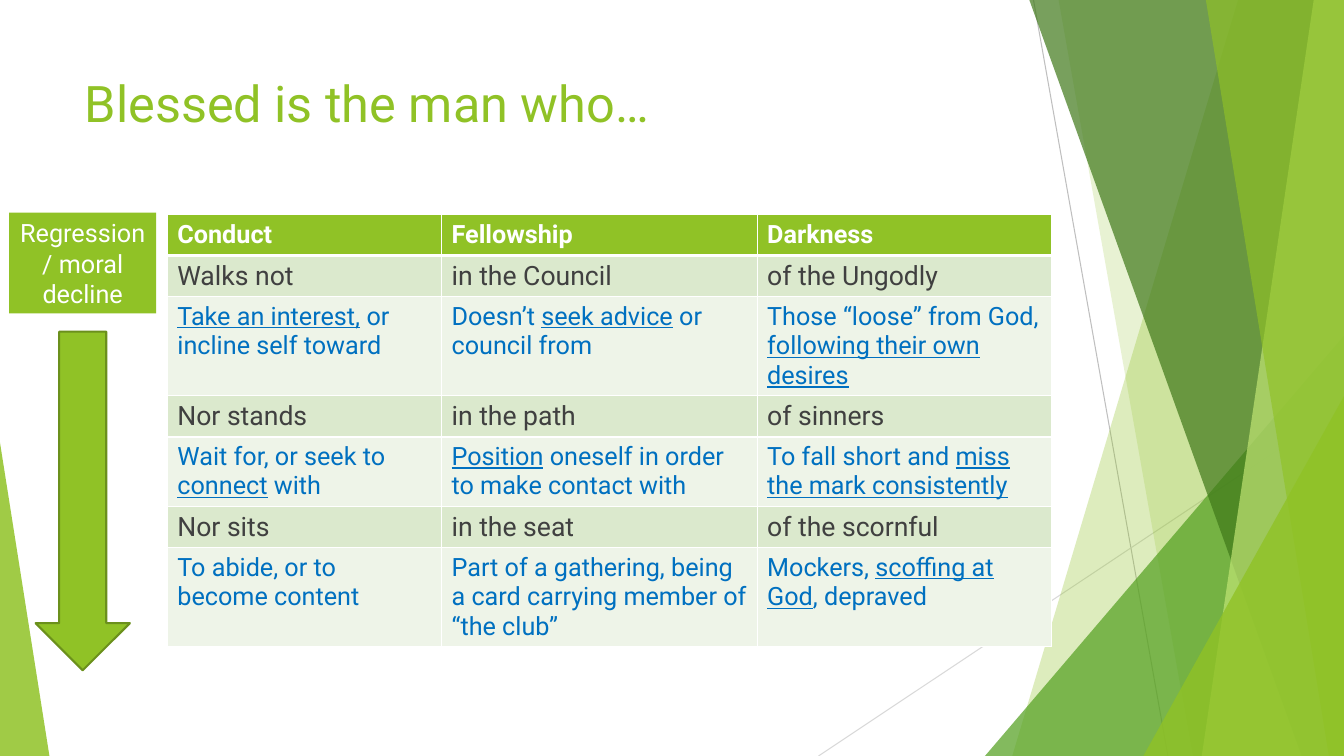
from lxml import etree
from pptx import Presentation
from pptx.dml.color import RGBColor
from pptx.enum.shapes import MSO_CONNECTOR, MSO_SHAPE
from pptx.enum.text import MSO_ANCHOR, PP_ALIGN
from pptx.oxml.ns import qn
from pptx.util import Inches, Pt

STRAIGHT = MSO_CONNECTOR.STRAIGHT
TRIANGLE, RECTANGLE, DOWN_ARROW = (
    MSO_SHAPE.ISOSCELES_TRIANGLE, MSO_SHAPE.RECTANGLE, MSO_SHAPE.DOWN_ARROW)
TOP, MIDDLE = MSO_ANCHOR.TOP, MSO_ANCHOR.MIDDLE
LEFT, CENTER = PP_ALIGN.LEFT, PP_ALIGN.CENTER

WIDTH, HEIGHT = Inches(13.33), Inches(7.5)
FONT = "Roboto"
COLORS = {
    "lime": "90C226", "green": "54A021", "forest": "3F7819", "pale": "C0E474",
    "edge": "6B901C", "white": "FFFFFF", "ink": "404040", "blue": "0070C0",
    "verse_band": "DBE9CD", "meaning_band": "EEF4E8",
    "ray_dark": "BFBFBF", "ray_light": "D9D9D9",
}
FORMATS = {
    "title": {"size": Pt(36), "bold": False, "color": "lime"},
    "label": {"size": Pt(18), "bold": False, "color": "white"},
    "header": {"size": Pt(18), "bold": True, "color": "white"},
    "verse": {"size": Pt(19), "bold": False, "color": "ink"},
    "meaning": {"size": Pt(18), "bold": False, "color": "blue"},
}
BANDS = {"header": "lime", "verse": "verse_band", "meaning": "meaning_band"}

HEADINGS = ("Conduct", "Fellowship", "Darkness")
COLUMN_WEIGHTS = (2.72, 3.13, 2.92)
VERSES = [
    ("Walks not", "in the Council", "of the Ungodly"),
    ("Nor stands", "in the path", "of sinners"),
    ("Nor sits", "in the seat", "of the scornful"),
]
MEANINGS = [
    (3, ("_Take an interest,_ or incline self toward",
         "Doesn’t _seek advice_ or council from",
         "Those “loose” from God, _following their own desires_")),
    (2, ("Wait for, or seek to _connect_ with",
         "_Position_ oneself in order to make contact with",
         "To fall short and _miss the mark consistently_")),
    (3, ("To abide, or to become content",
         "Part of a gathering, being a card carrying member of “the club”",
         "Mockers, _scoffing at God_, depraved")),
]


def percent_box(left, top, width, height):
    return (int(WIDTH * left / 100), int(HEIGHT * top / 100),
            int(WIDTH * width / 100), int(HEIGHT * height / 100))


def within(box, left, top, width, height):
    x, y, w, h = box
    return int(x + w * left), int(y + h * top), int(w * width), int(h * height)


def rgb(color):
    return RGBColor.from_string(COLORS[color])


def paint(shape, color, opacity=100, edge=None):
    shape.shadow.inherit = False
    shape.fill.solid()
    shape.fill.fore_color.rgb = rgb(color)
    if opacity < 100:
        hue = next(shape.fill._xPr.iter(qn("a:srgbClr")))
        etree.SubElement(hue, qn("a:alpha"), val=str(opacity * 1000))
    if edge:
        shape.line.color.rgb = rgb(edge)
        shape.line.width = Pt(1.5)
    else:
        shape.line.fill.background()


def write(frame, text, style, align=LEFT):
    paragraph = frame.paragraphs[0]
    paragraph.alignment = align
    for index, part in enumerate(text.split("_")):
        if not part:
            continue
        run = paragraph.add_run()
        run.text = part
        run.font.name = FONT
        run.font.underline = index % 2 == 1
        for name, value in FORMATS[style].items():
            if name == "color":
                run.font.color.rgb = rgb(value)
            else:
                setattr(run.font, name, value)


def add_ray(shapes, box, start, end, color):
    x1, y1, _, _ = within(box, *start, 0, 0)
    x2, y2, _, _ = within(box, *end, 0, 0)
    ray = shapes.add_connector(STRAIGHT, x1, y1, x2, y2)
    ray.line.color.rgb = rgb(color)
    ray.line.width = Pt(0.75)
    etree.SubElement(ray._element.spPr, qn("a:effectLst"))


def add_facet(shapes, box, top_x, bottom_x, color, opacity):
    x, y, width, height = box
    right, bottom = x + width, y + height
    outline = shapes.build_freeform(int(x + width * top_x / 100), y, scale=1.0)
    outline.add_line_segments(
        [(right, y), (right, bottom), (int(x + width * bottom_x / 100), bottom)])
    paint(outline.convert_to_shape(), color, opacity)


def add_corner(shapes, left, top, width, apex, color, opacity):
    corner = shapes.add_shape(TRIANGLE, *percent_box(left, top, width, 100 - top))
    corner.adjustments[0] = apex
    paint(corner, color, opacity)


def add_backdrop(shapes, box):
    add_ray(shapes, box, (0.769, 0), (0.869, 1), "ray_dark")
    add_ray(shapes, box, (1, 0.537), (0.609, 1), "ray_light")
    add_facet(shapes, box, 92.12, 75.32, "lime", 30)
    add_facet(shapes, box, 78.77, 88.75, "lime", 20)
    add_corner(shapes, 73.29, 44.4, 26.71, 1, "green", 72)
    add_facet(shapes, box, 76.59, 96.85, "forest", 70)
    add_facet(shapes, box, 97.75, 89.42, "pale", 70)
    add_facet(shapes, box, 89.72, 98.87, "lime", 65)
    add_corner(shapes, 85.07, 52.4, 14.93, 1, "lime", 80)
    add_corner(shapes, 0, 58.53, 3.68, 0, "lime", 85)


def add_title(title, box):
    title.left, title.top, title.width, title.height = box
    title.text_frame.vertical_anchor = TOP
    write(title.text_frame, "Blessed is the man who…", "title")


def border_cell(cell, bottom_width):
    properties = cell._tc.get_or_add_tcPr()
    widths = {"a:lnL": 1, "a:lnR": 1, "a:lnT": 1, "a:lnB": bottom_width}
    for position, (side, width) in enumerate(widths.items()):
        line = etree.Element(qn(side), w=str(Pt(width)))
        fill = etree.SubElement(line, qn("a:solidFill"))
        etree.SubElement(fill, qn("a:srgbClr"), val=COLORS["white"])
        properties.insert(position, line)


def add_psalm_table(shapes, box):
    rows = [("header", 1, HEADINGS)]
    for verse, (lines, meaning) in zip(VERSES, MEANINGS):
        rows += [("verse", 1, verse), ("meaning", lines, meaning)]
    table = shapes.add_table(len(rows), len(HEADINGS), *box).table
    for column, weight in zip(table.columns, COLUMN_WEIGHTS):
        column.width = int(box[2] * weight / sum(COLUMN_WEIGHTS))
    for row, (style, lines, texts) in zip(table.rows, rows):
        row.height = int(HEIGHT * (0.054 + 0.038 * (lines - 1)))
        for cell, text in zip(row.cells, texts):
            cell.fill.solid()
            cell.fill.fore_color.rgb = rgb(BANDS[style])
            border_cell(cell, 3 if style == "header" else 1)
            write(cell.text_frame, text, style)


def add_decline(shapes, box):
    arrow = shapes.add_shape(DOWN_ARROW, *within(box, 0.18, 0.26, 0.64, 0.74))
    paint(arrow, "lime", edge="edge")
    label = shapes.add_shape(RECTANGLE, *within(box, 0, 0, 1, 0.22))
    paint(label, "lime")
    label.text_frame.word_wrap = True
    label.text_frame.vertical_anchor = MIDDLE
    write(label.text_frame, "Regression / moral decline", "label", CENTER)


def main():
    deck = Presentation()
    deck.slide_width, deck.slide_height = WIDTH, HEIGHT
    slide = deck.slides.add_slide(deck.slide_layouts[5])
    shapes = slide.shapes
    add_backdrop(shapes, percent_box(0, 0, 100, 100))
    add_title(shapes.title, percent_box(5.55, 8.93, 70.52, 19.2))
    add_psalm_table(shapes, percent_box(12.45, 28.4, 65.79, 57.2))
    add_decline(shapes, percent_box(0.68, 28.13, 10.95, 60.53))
    deck.save("out.pptx")


if __name__ == "__main__":
    main()
